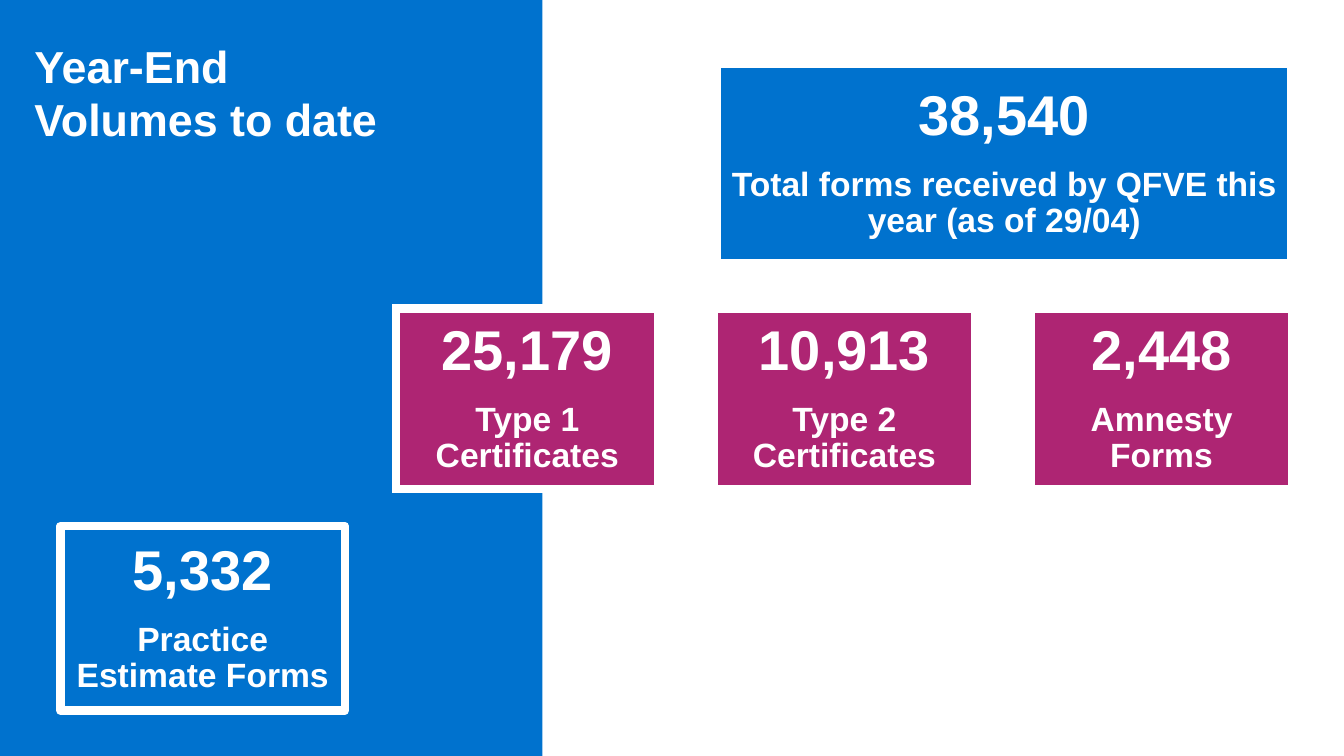
from pptx import Presentation
from pptx.dml.color import RGBColor
from pptx.enum.shapes import MSO_SHAPE
from pptx.enum.text import MSO_ANCHOR, MSO_AUTO_SIZE, PP_ALIGN
from pptx.oxml.ns import qn
from pptx.util import Inches, Pt
from lxml import etree

RECTANGLE = MSO_SHAPE.RECTANGLE
MIDDLE, TOP = MSO_ANCHOR.MIDDLE, MSO_ANCHOR.TOP
CENTER, LEFT = PP_ALIGN.CENTER, PP_ALIGN.LEFT
NO_AUTOFIT = MSO_AUTO_SIZE.NONE

TITLE = ["Year-End", "Volumes to date"]
TOTAL = ("38,540", "Total forms received by QFVE this year (as of 29/04)")
FORM_TYPES = [
    ("25,179", "Type 1 Certificates"),
    ("10,913", "Type 2 Certificates"),
    ("2,448", "Amnesty Forms"),
]
ESTIMATES = ("5,332", "Practice Estimate Forms")

THEME = {
    "font": "Arial",
    "blue": RGBColor(0x00, 0x72, 0xCE),
    "magenta": RGBColor(0xAE, 0x25, 0x73),
    "white": RGBColor(0xFF, 0xFF, 0xFF),
    "title": Pt(32),
    "figure": Pt(40),
    "label": Pt(24),
    "border": Pt(6),
}

SLIDE_W, SLIDE_H = 13.33, 7.5
PANEL_W = 5.38
TYPE_LEFT, TYPE_TOP, TYPE_W, TYPE_H = 3.93, 3.06, 2.6, 1.79
TYPE_RIGHT = 12.82
TYPE_PITCH = (TYPE_RIGHT - TYPE_W - TYPE_LEFT) / (len(FORM_TYPES) - 1)


def apply_format(target, values):
    for attribute, value in values.items():
        setattr(target, attribute, value)


def write_lines(frame, lines, paragraph_format):
    """Fill the frame with one bold white paragraph per (text, size) pair."""
    for index, (text, size) in enumerate(lines):
        paragraph = frame.paragraphs[0] if index == 0 else frame.add_paragraph()
        apply_format(paragraph, paragraph_format)
        run = paragraph.add_run()
        run.text = text
        apply_format(run.font, {"name": THEME["font"], "size": size, "bold": True})
        run.font.color.rgb = THEME["white"]


def add_block(slide, box, color):
    block = slide.shapes.add_shape(RECTANGLE, *map(Inches, box))
    block.shadow.inherit = False
    block.fill.solid()
    block.fill.fore_color.rgb = color
    block.line.fill.background()
    return block


def add_tile(slide, box, color, content, square_corners=True):
    """Add a white-bordered block holding a figure above its label."""
    tile = add_block(slide, box, color)
    tile.line.color.rgb = THEME["white"]
    tile.line.width = THEME["border"]
    if square_corners:
        outline = tile.line._get_or_add_ln()
        etree.SubElement(outline, qn("a:miter"), lim="800000")
    side_inset, end_inset = Inches(0.06), Inches(0.03)
    frame = tile.text_frame
    apply_format(frame, {
        "word_wrap": True, "vertical_anchor": MIDDLE,
        "margin_left": side_inset, "margin_right": side_inset,
        "margin_top": end_inset, "margin_bottom": end_inset,
    })
    figure, label = content
    write_lines(
        frame,
        [(figure, THEME["figure"]), (label, THEME["label"])],
        {"alignment": CENTER, "line_spacing": 0.9, "space_after": Pt(14)},
    )


def set_title(slide):
    title = slide.shapes.title
    apply_format(title, {
        "left": Inches(0.24), "top": Inches(0.33),
        "width": Inches(4.72), "height": Inches(1.18),
    })
    frame = title.text_frame
    apply_format(frame, {
        "word_wrap": True, "vertical_anchor": TOP, "auto_size": NO_AUTOFIT,
    })
    write_lines(
        frame,
        [(line, THEME["title"]) for line in TITLE],
        {"alignment": LEFT, "line_spacing": 1.0, "space_before": Pt(0)},
    )


def main():
    deck = Presentation()
    deck.slide_width, deck.slide_height = Inches(SLIDE_W), Inches(SLIDE_H)
    slide = deck.slides.add_slide(deck.slide_layouts[5])

    panel = add_block(slide, (0, 0, PANEL_W, SLIDE_H), THEME["blue"])
    slide.shapes.title._element.addprevious(panel._element)
    set_title(slide)

    add_tile(slide, (7.11, 0.63, 5.7, 1.98), THEME["blue"], TOTAL)
    for column, form_type in enumerate(FORM_TYPES):
        box = (TYPE_LEFT + column * TYPE_PITCH, TYPE_TOP, TYPE_W, TYPE_H)
        add_tile(slide, box, THEME["magenta"], form_type)
    add_tile(slide, (0.6, 5.22, 2.82, 1.83), THEME["blue"], ESTIMATES,
             square_corners=False)

    deck.save("out.pptx")


if __name__ == "__main__":
    main()
